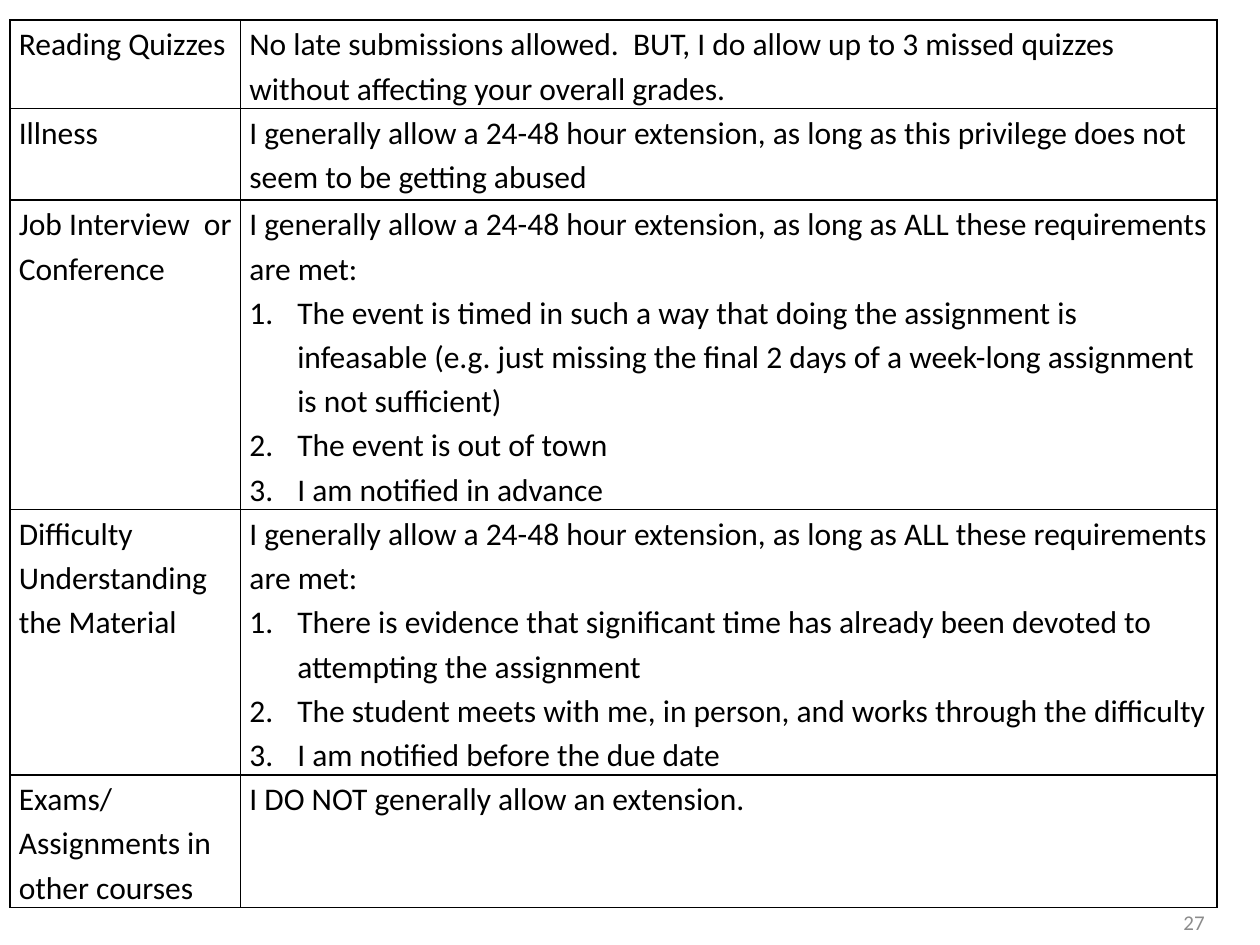
from pptx import Presentation
from pptx.dml.color import RGBColor
from pptx.enum.text import MSO_ANCHOR, PP_ALIGN
from pptx.oxml import parse_xml
from pptx.oxml.ns import nsdecls
from pptx.util import Inches, Pt

INK, GRAY = "000000", "8C8C8C"
W, H = Inches(10), Inches(7.5)
COLS = [0.183, 0.775]                       # shares of slide width
ROWS = [0.088, 0.097, 0.225, 0.225, 0.139]  # shares of slide height
TERMS = "I generally allow a 24-48 hour extension, as long as ALL these requirements are met:"

# Topic, rule, then any numbered conditions
POLICY = [
    ("Reading Quizzes",
     "No late submissions allowed.  BUT, I do allow up to 3 missed quizzes "
     "without affecting your overall grades."),
    ("Illness",
     "I generally allow a 24-48 hour extension, as long as this privilege "
     "does not seem to be getting abused"),
    ("Job Interview  or Conference", TERMS,
     "The event is timed in such a way that doing the assignment is infeasable "
     "(e.g. just missing the final 2 days of a week-long assignment is not sufficient)",
     "The event is out of town",
     "I am notified in advance"),
    ("Difficulty Understanding the Material", TERMS,
     "There is evidence that significant time has already been devoted to "
     "attempting the assignment",
     "The student meets with me, in person, and works through the difficulty",
     "I am notified before the due date"),
    ("Exams/Assignments in other courses",
     "I DO NOT generally allow an extension."),
]


def write(frame, lines, size=18, color=INK, align=PP_ALIGN.LEFT, space=1.15):
    """Fill a text frame; every line after the first is numbered."""
    frame.word_wrap = True
    for i, line in enumerate(lines):
        para = frame.add_paragraph() if i else frame.paragraphs[0]
        para.alignment, para.line_spacing = align, space
        if i:
            props = para._p.get_or_add_pPr()
            props.set("marL", str(Inches(0.38)))
            props.set("indent", str(-Inches(0.38)))
            props.append(parse_xml(f'<a:buFont {nsdecls("a")} typeface="+mj-lt"/>'))
            props.append(parse_xml(f'<a:buAutoNum {nsdecls("a")} type="arabicPeriod"/>'))
        run = para.add_run()
        run.text = line
        run.font.name, run.font.size = "Calibri", Pt(size)
        run.font.color.rgb = RGBColor.from_string(color)


def border(cell):
    props = cell._tc.get_or_add_tcPr()
    for i, side in enumerate(("lnL", "lnR", "lnT", "lnB")):
        props.insert(i, parse_xml(
            f'<a:{side} {nsdecls("a")} w="{Pt(1)}"><a:solidFill>'
            f'<a:srgbClr val="{INK}"/></a:solidFill></a:{side}>'))


deck = Presentation()
deck.slide_width, deck.slide_height = W, H
slide = deck.slides.add_slide(deck.slide_layouts[6])

grid = slide.shapes.add_table(
    len(ROWS), len(COLS), Inches(0.08), Inches(0.16),
    int(W * sum(COLS)), int(H * sum(ROWS))).table
grid.first_row = grid.horz_banding = False
for col, share in zip(grid.columns, COLS):
    col.width = int(W * share)

for row, share, (topic, *rules) in zip(grid.rows, ROWS, POLICY):
    row.height = int(H * share)
    for cell, lines in zip(row.cells, ([topic], rules)):
        cell.fill.background()
        cell.margin_left = cell.margin_right = Inches(0.07)
        cell.margin_top = cell.margin_bottom = 0
        cell.vertical_anchor = MSO_ANCHOR.TOP
        border(cell)
        write(cell.text_frame, lines)

page = slide.shapes.add_textbox(
    int(W * 0.733), int(H * 0.949), int(W * 0.233), int(H * 0.053)).text_frame
page.vertical_anchor = MSO_ANCHOR.MIDDLE
write(page, ["27"], size=12, color=GRAY, align=PP_ALIGN.RIGHT, space=1.0)

deck.save("out.pptx")
